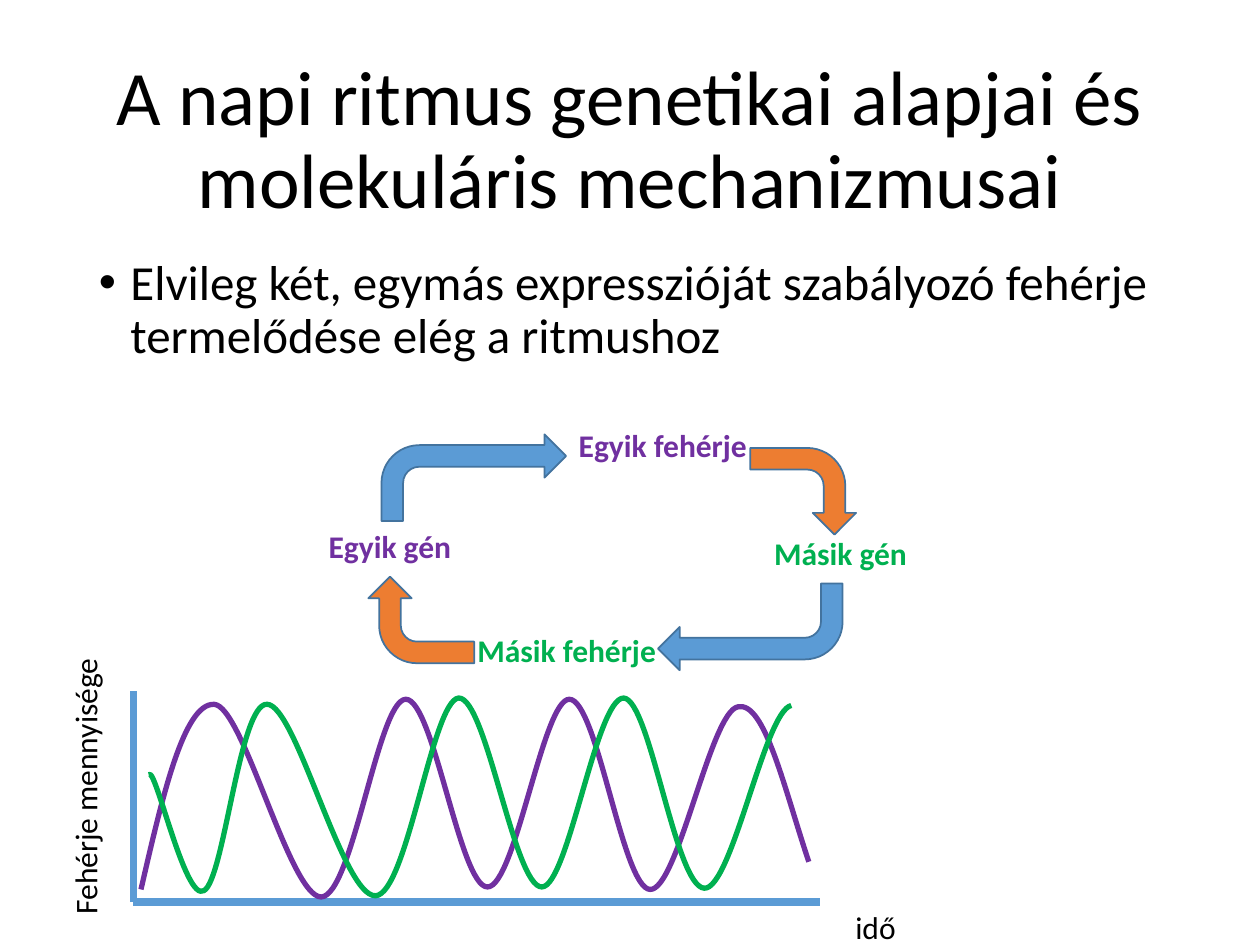
from lxml.etree import SubElement
from pptx import Presentation
from pptx.dml.color import RGBColor
from pptx.enum.shapes import MSO_CONNECTOR as Connector, MSO_SHAPE as Shape
from pptx.enum.text import MSO_ANCHOR as Anchor, MSO_AUTO_SIZE as AutoSize, PP_ALIGN as Align
from pptx.oxml.ns import qn
from pptx.util import Pt

# Content: lengths in points, boxes as left, top, width, height
BLACK, PURPLE, GREEN = "000000", "7030A0", "00B050"
BLUE, ORANGE, OUTLINE = "5B9BD5", "ED7D31", "43739E"

TITLE = "A napi ritmus genetikai alapjai és molekuláris mechanizmusai"
TITLE_BOX = (49.5, 28.75, 621, 104.4)
BODY = "Elvileg két, egymás expresszióját szabályozó fehérje termelődése elég a ritmushoz"
BODY_BOX = (49.5, 144, 621, 74)

LABEL_HEIGHT = 29
LABELS = [  # text, left, top, width, colour, bold, rotation
    ("Egyik gén", 180.7, 297.4, 157.7, PURPLE, True, 0),
    ("Egyik fehérje", 323.6, 239.8, 144.7, PURPLE, True, 0),
    ("Másik gén", 435.2, 301.7, 157.7, GREEN, True, 0),
    ("Másik fehérje", 265.7, 357.1, 144.7, GREEN, True, 0),
    ("idő", 481.7, 515.5, 134.6, BLACK, False, 0),
    ("Fehérje mennyisége", -64.8, 401.8, 226.8, BLACK, False, 270),
]

LONG_ARROW, SHORT_ARROW = (105.5, 49.5), (49.5, 60.5)
ARROWS = [  # left, top, size, rotation, fill
    (218, 248.2, LONG_ARROW, 0, BLUE),
    (376, 333.5, LONG_ARROW, 180, BLUE),
    (434.2, 250.5, SHORT_ARROW, 90, ORANGE),
    (216, 324, SHORT_ARROW, 270, ORANGE),
]

ORIGIN = (76.3, 515.5)
AXIS_ENDS = [(76.3, 394.6), (468.7, 515.5)]

# Each wave: start point, then Bézier segments (two controls and an end)
WAVES = {
    PURPLE: [
        (80.6, 508.3),
        (92.9, 455, 105.1, 401.8, 122.4, 402.5),
        (139, 403.2, 165.6, 512.6, 183.6, 512.6),
        (201.6, 511.9, 216, 400.3, 231.8, 399.6),
        (247.7, 398.9, 262.8, 506.9, 278.6, 506.9),
        (294.5, 506.9, 310.3, 399.6, 325.4, 399.6),
        (341.3, 399.6, 355.7, 507.6, 371.5, 508.3),
        (387.4, 509, 406.1, 406.1, 421.9, 403.9),
        (437, 401, 447.8, 449.3, 462.2, 492.5),
    ],
    GREEN: [
        (85, 442.8),
        (88.6, 436.3, 105.8, 516.2, 116.6, 509),
        (128.2, 502.6, 136.8, 401.8, 152.6, 402.5),
        (169.2, 402.5, 195.8, 512.6, 214.6, 511.9),
        (232.6, 511.2, 247, 400.3, 262.1, 398.9),
        (277.9, 398.2, 293.8, 506.9, 309.6, 506.9),
        (324.7, 506.9, 340.6, 398.9, 356.4, 398.9),
        (371.5, 399.6, 385.9, 506.9, 402.5, 507.6),
        (418.3, 508.3, 437, 406.1, 452.2, 403.2),
    ],
}


def points(values):
    return [Pt(value) for value in values]


def color(target, hex_code):
    target.rgb = RGBColor.from_string(hex_code)


def assign(target, formats):
    for name, value in formats.items():
        setattr(target, name, value)


def write(shape, text, size, hex_code, bold=False, paragraph_format=None, frame_format=None):
    frame = shape.text_frame
    assign(frame, {"word_wrap": True, "auto_size": AutoSize.NONE, **(frame_format or {})})
    paragraph = frame.paragraphs[0]
    assign(paragraph, paragraph_format or {})
    run = paragraph.add_run()
    run.text = text
    assign(run.font, {"name": "Calibri", "size": Pt(size), "bold": bold})
    color(run.font.color, hex_code)
    return paragraph


def style_line(shape, hex_code, width):
    color(shape.line.color, hex_code)
    shape.line.width = Pt(width)


def add_curve(start, segments):
    """Draw straight segments, then turn each one into a cubic Bézier."""
    builder = shapes.build_freeform(*points(start))
    builder.add_line_segments([points(segment[-2:]) for segment in segments], close=False)
    curve = builder.convert_to_shape()
    lines = list(curve._element.iter(qn("a:lnTo")))
    for line, segment in zip(lines, segments):
        line.tag = qn("a:cubicBezTo")
        line.remove(line[0])
        for x, y in zip(segment[::2], segment[1::2]):
            corner = SubElement(line, qn("a:pt"))
            corner.set("x", str(Pt(x) - curve.left))
            corner.set("y", str(Pt(y) - curve.top))
    return curve


presentation = Presentation()
assign(presentation, {"slide_width": Pt(720), "slide_height": Pt(540)})
slide = presentation.slides.add_slide(presentation.slide_layouts[5])
shapes = slide.shapes

# Title
title = shapes.title
assign(title, dict(zip(("left", "top", "width", "height"), points(TITLE_BOX))))
write(title, TITLE, 44, BLACK,
      paragraph_format={"alignment": Align.CENTER, "line_spacing": 0.9},
      frame_format={"vertical_anchor": Anchor.MIDDLE})

# Bulleted statement
body = shapes.add_textbox(*points(BODY_BOX))
paragraph = write(body, BODY, 28, BLACK,
                  paragraph_format={"line_spacing": 0.9, "space_before": Pt(10)})
properties = paragraph._p.get_or_add_pPr()
properties.set("marL", str(Pt(18)))
properties.set("indent", str(-Pt(18)))
SubElement(properties, qn("a:buFont")).set("typeface", "Arial")
SubElement(properties, qn("a:buChar")).set("char", "•")

# Gene, protein and axis labels
for text, left, top, width, hex_code, bold, rotation in LABELS:
    label = shapes.add_textbox(*points((left, top, width, LABEL_HEIGHT)))
    label.rotation = rotation
    write(label, text, 18, hex_code, bold)

# Feedback loop arrows
for left, top, size, rotation, fill in ARROWS:
    arrow = shapes.add_shape(Shape.BENT_ARROW, *points((left, top, *size)))
    arrow.rotation = rotation
    arrow.shadow.inherit = False
    arrow.fill.solid()
    color(arrow.fill.fore_color, fill)
    style_line(arrow, OUTLINE, 1)

# Graph axes
for end in AXIS_ENDS:
    axis = shapes.add_connector(Connector.STRAIGHT, *points(ORIGIN + end))
    style_line(axis, BLUE, 4.5)
    SubElement(axis._element.spPr, qn("a:effectLst"))

# Protein level waves
for hex_code, (start, *segments) in WAVES.items():
    wave = add_curve(start, segments)
    wave.shadow.inherit = False
    wave.fill.background()
    style_line(wave, hex_code, 3)

presentation.save("out.pptx")
